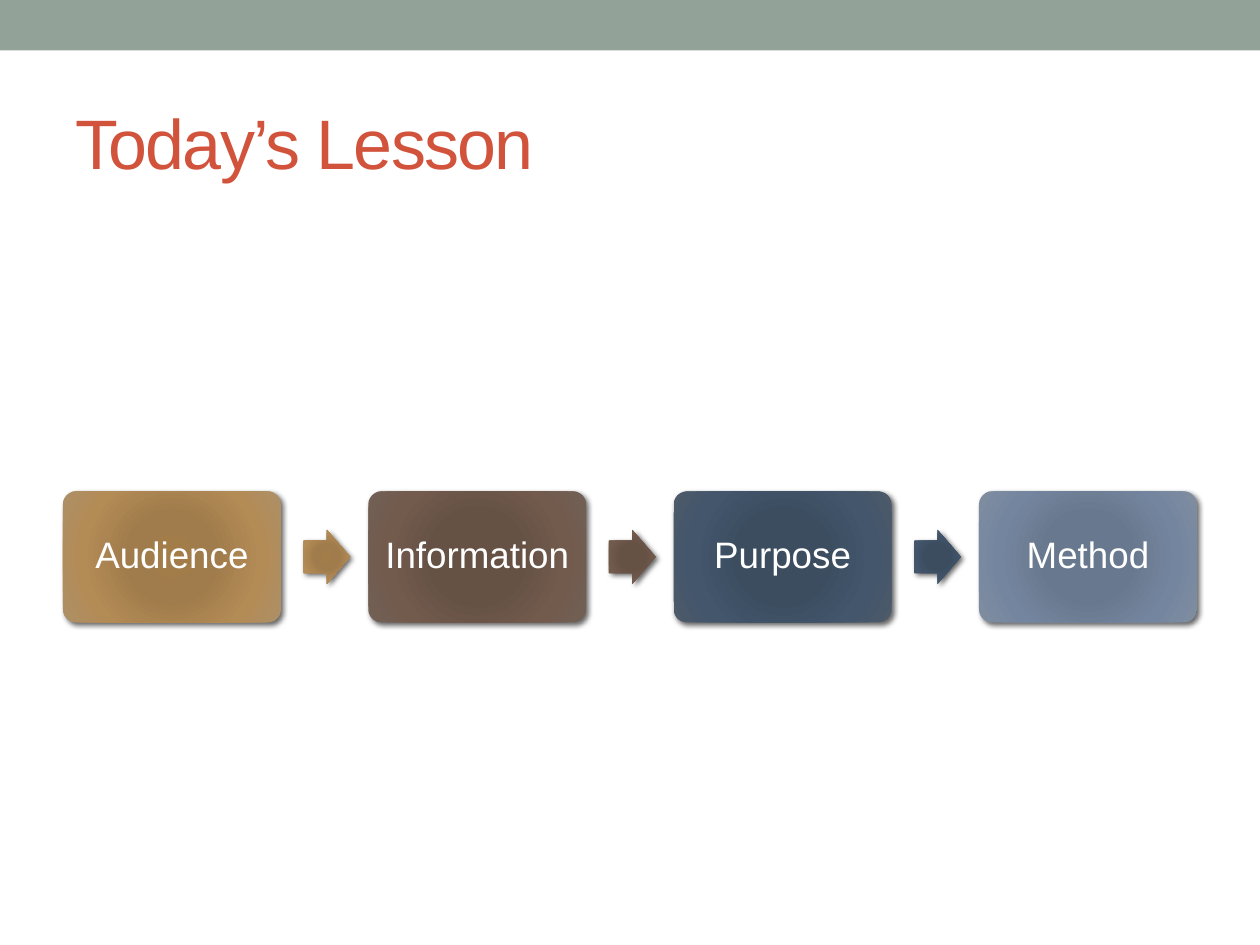
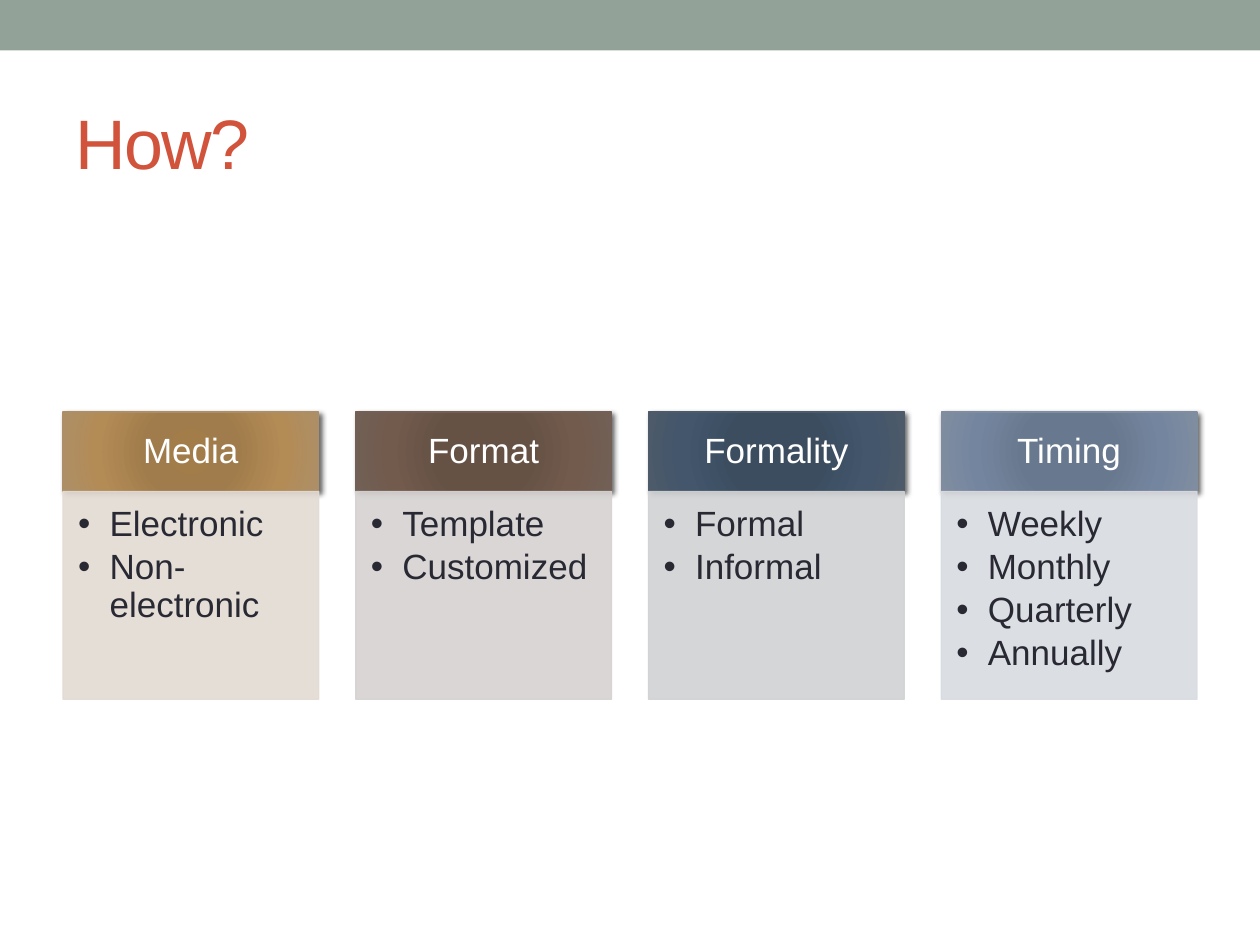
from lxml.etree import SubElement
from pptx import Presentation
from pptx.dml.color import RGBColor
from pptx.enum.shapes import MSO_SHAPE as Shape
from pptx.enum.text import MSO_ANCHOR as Anchor, PP_ALIGN as Align
from pptx.oxml.ns import qn
from pptx.util import Inches, Pt

LESSON_TITLE = "Today’s Lesson"
LESSON_STEPS = ["Audience", "Information", "Purpose", "Method"]

HOW_TITLE = "How?"
HOW_COLUMNS = [
    ("Media", ["Electronic", "Non-electronic"]),
    ("Format", ["Template", "Customized"]),
    ("Formality", ["Formal", "Informal"]),
    ("Timing", ["Weekly", "Monthly", "Quarterly", "Annually"]),
]

FONT = "Arial"
WHITE = RGBColor(0xFF, 0xFF, 0xFF)
BLACK = RGBColor(0x00, 0x00, 0x00)
SAGE = RGBColor(0x93, 0xA2, 0x99)
RED = RGBColor(0xD2, 0x53, 0x3C)
INK = RGBColor(0x29, 0x29, 0x34)

# Gradient colours from the centre of a shape to its edge
GRADIENT_STOPS = [0, 34, 70, 100]
GRADIENTS = [
    [RGBColor.from_string(color) for color in row.split()]
    for row in (
        "A37D49 A07C4C B38B55 AD8F67",
        "685044 665145 725A4D 726056",
        "3B4D61 3C4D60 43566B 4C5A6A",
        "677790 68788E 74869F 808DA0",
    )
]
TINTS = [
    RGBColor(0xE3, 0xDB, 0xD3),
    RGBColor(0xD5, 0xD2, 0xD1),
    RGBColor(0xD0, 0xD2, 0xD4),
    RGBColor(0xD8, 0xDB, 0xDF),
]
TINT_OPACITY = 90

MARGIN = 0.5
CONTENT_WIDTH = 9
STEP_TOP, STEP_WIDTH, STEP_HEIGHT = 3.9, 1.73, 1.04
ARROW_GAP, ARROW_WIDTH, ARROW_HEIGHT = 0.18, 0.37, 0.43
HEADER_TOP, HEADER_HEIGHT = 3.27, 0.63
COLUMN_WIDTH, BODY_HEIGHT = 2.03, 1.65


def spread(count, width):
    """Left edges of equally spaced items that fill the content width."""
    pitch = (CONTENT_WIDTH - width) / (count - 1)
    return [MARGIN + index * pitch for index in range(count)]


def add_color(parent, color, opacity=100):
    element = SubElement(parent, qn("a:srgbClr"), val=str(color))
    if opacity < 100:
        SubElement(element, qn("a:alpha"), val=str(opacity * 1000))


def write(shape, text, size=20, color=WHITE, align=Align.LEFT, anchor=Anchor.MIDDLE,
          insets=(0.1, 0.05, 0.1, 0.05), line_spacing=None, space_after=0,
          tracking=None, bullet=False):
    """Fill a shape with one paragraph for each line of text."""
    frame = shape.text_frame
    frame.word_wrap = True
    frame.vertical_anchor = anchor
    (frame.margin_left, frame.margin_top,
     frame.margin_right, frame.margin_bottom) = map(Inches, insets)
    frame.text = text
    for paragraph in frame.paragraphs:
        paragraph.alignment = align
        paragraph.line_spacing = line_spacing
        paragraph.space_after = Pt(space_after)
        font = paragraph.runs[0].font
        font.name, font.size, font.color.rgb = FONT, Pt(size), color
        if tracking:
            font._element.set("spc", str(tracking * 100))
        if bullet:
            properties = paragraph._p.get_or_add_pPr()
            properties.set("marL", str(Inches(0.25)))
            properties.set("indent", str(-Inches(0.25)))
            SubElement(properties, qn("a:buFont"), typeface=FONT)
            SubElement(properties, qn("a:buChar"), char="•")


def add_shape(slide, kind, left, top, width, height, fill=None, line=None, opacity=100):
    shape = slide.shapes.add_shape(
        kind, Inches(left), Inches(top), Inches(width), Inches(height))
    shape.shadow.inherit = False
    paints = []
    if fill is not None:
        shape.fill.solid()
        shape.fill.fore_color.rgb = fill
        paints.append(shape.fill)
    if line is None:
        shape.line.fill.background()
    else:
        shape.line.color.rgb = line
        shape.line.width = Pt(0.75)
        paints.append(shape.line.fill)
    if opacity < 100:
        for color in shape._element.spPr.iter(qn("a:srgbClr")):
            SubElement(color, qn("a:alpha"), val=str(opacity * 1000))
    return shape


def add_glossy_shape(slide, kind, left, top, width, height, colors, line=None):
    """Add a shape with a radial gradient and a soft shadow."""
    shape = add_shape(slide, kind, left, top, width, height, line=line)
    shape.fill.gradient()
    properties = shape._element.spPr
    gradient = properties.find(qn("a:gradFill"))
    for child in list(gradient):
        gradient.remove(child)
    stops = SubElement(gradient, qn("a:gsLst"))
    for position, color in zip(GRADIENT_STOPS, colors):
        add_color(SubElement(stops, qn("a:gs"), pos=str(position * 1000)), color)
    circle = SubElement(gradient, qn("a:path"), path="circle")
    SubElement(circle, qn("a:fillToRect"), {side: "100000" for side in "ltrb"})
    shadow = SubElement(
        properties.find(qn("a:effectLst")), qn("a:outerShdw"), blurRad=str(Pt(3)),
        dist=str(Pt(2)), dir=str(45 * 60000), rotWithShape="0")
    add_color(shadow, BLACK, 60)
    return shape


def add_titled_slide(presentation, title):
    slide = presentation.slides.add_slide(presentation.slide_layouts[6])
    add_shape(slide, Shape.RECTANGLE, 0, 0, 10, 0.4, fill=SAGE)
    title_box = slide.shapes.add_textbox(
        Inches(MARGIN), Inches(0.58), Inches(CONTENT_WIDTH), Inches(1.08))
    write(title_box, title, size=40, color=RED, tracking=-1)
    return slide


def add_lesson_slide(presentation):
    slide = add_titled_slide(presentation, LESSON_TITLE)
    arrow_top = STEP_TOP + (STEP_HEIGHT - ARROW_HEIGHT) / 2
    lefts = spread(len(LESSON_STEPS), STEP_WIDTH)
    for step, left, colors in zip(LESSON_STEPS, lefts, GRADIENTS):
        box = add_glossy_shape(slide, Shape.ROUNDED_RECTANGLE, left, STEP_TOP,
                               STEP_WIDTH, STEP_HEIGHT, colors)
        box.adjustments[0] = 0.1
        write(box, step, size=21, align=Align.CENTER, insets=[0.09] * 4,
              line_spacing=0.9)
        if left != lefts[-1]:
            arrow = add_glossy_shape(
                slide, Shape.RIGHT_ARROW, left + STEP_WIDTH + ARROW_GAP, arrow_top,
                ARROW_WIDTH, ARROW_HEIGHT, colors)
            arrow.adjustments[0] = 0.6
            arrow.adjustments[1] = 0.5


def add_how_slide(presentation):
    slide = add_titled_slide(presentation, HOW_TITLE)
    lefts = spread(len(HOW_COLUMNS), COLUMN_WIDTH)
    for (heading, items), left, colors, tint in zip(
            HOW_COLUMNS, lefts, GRADIENTS, TINTS):
        header = add_glossy_shape(slide, Shape.RECTANGLE, left, HEADER_TOP, COLUMN_WIDTH,
                                  HEADER_HEIGHT, colors, line=colors[-1])
        write(header, heading, align=Align.CENTER, insets=(0.16, 0.09, 0.16, 0.09),
              line_spacing=0.9)
        body = add_shape(slide, Shape.RECTANGLE, left, HEADER_TOP + HEADER_HEIGHT,
                         COLUMN_WIDTH, BODY_HEIGHT, fill=tint, line=tint,
                         opacity=TINT_OPACITY)
        write(body, "\n".join(items), color=INK, anchor=Anchor.TOP,
              insets=(0.12, 0.12, 0.16, 0.17), line_spacing=0.9, space_after=3,
              bullet=True)


def main():
    presentation = Presentation()
    presentation.slide_width = Inches(10)
    presentation.slide_height = Inches(7.5)
    add_lesson_slide(presentation)
    add_how_slide(presentation)
    presentation.save("out.pptx")


if __name__ == "__main__":
    main()
